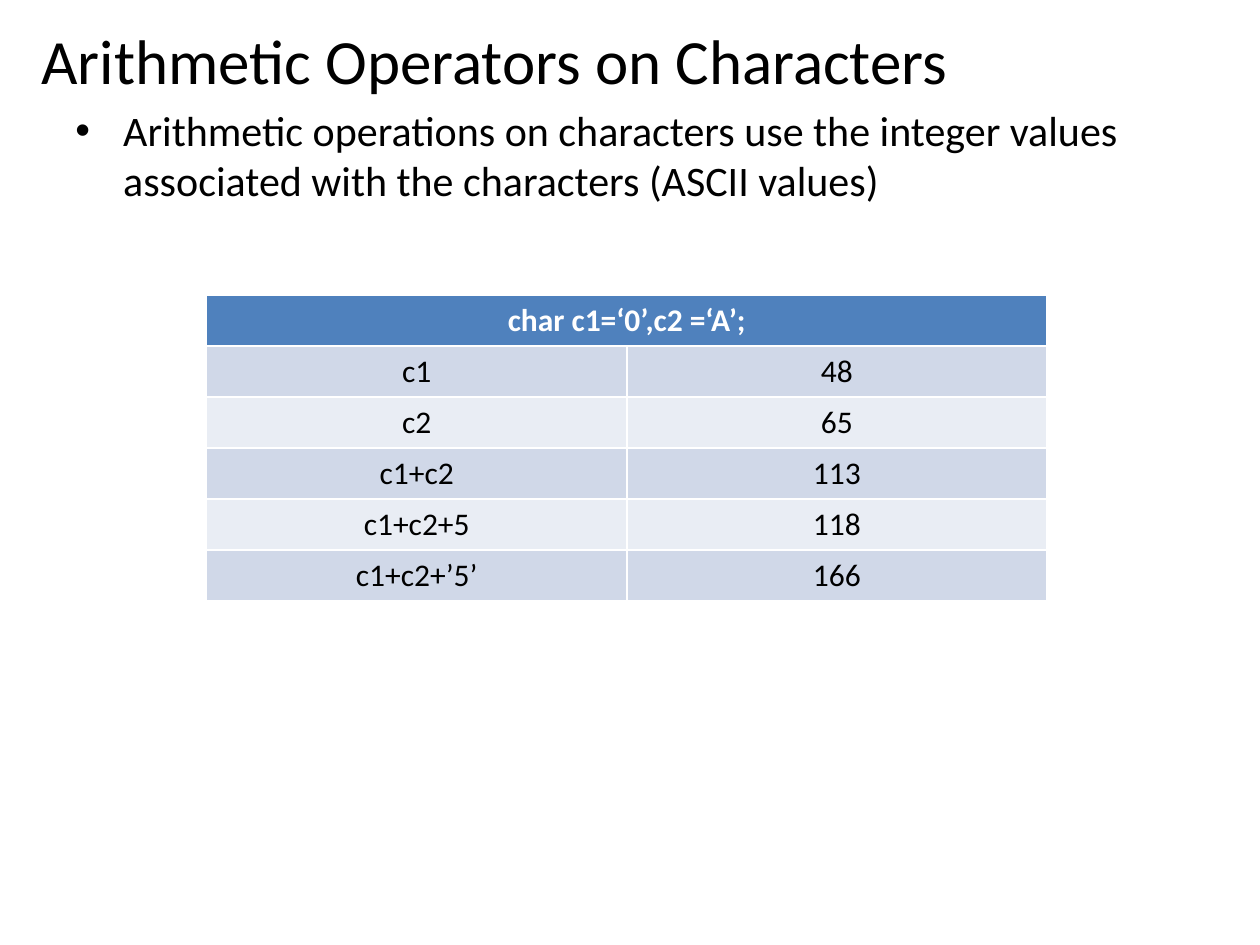
from lxml import etree
from pptx import Presentation, util as u
from pptx.dml.color import RGBColor
from pptx.enum import text
from pptx.oxml.ns import qn

BLACK = RGBColor(0x00, 0x00, 0x00)
WHITE = RGBColor(0xFF, 0xFF, 0xFF)
HEADER_BLUE = RGBColor(0x4F, 0x81, 0xBD)
BAND_DARK = RGBColor(0xD0, 0xD8, 0xE8)
BAND_LIGHT = RGBColor(0xE9, 0xED, 0xF4)

EXPRESSIONS = [
    ("c1", "48"),
    ("c2", "65"),
    ("c1+c2", "113"),
    ("c1+c2+5", "118"),
    ("c1+c2+’5’", "166"),
]


def write(frame, words, size, color=BLACK, bold=False, align=text.PP_ALIGN.LEFT):
    """Fill the frame's first paragraph and return that paragraph."""
    paragraph = frame.paragraphs[0]
    paragraph.alignment = align
    run = paragraph.add_run()
    run.text = words
    run.font.name = "Calibri"
    run.font.size = u.Pt(size)
    run.font.bold = bold
    run.font.color.rgb = color
    return paragraph


def add_frame(left, top, width, height, anchor):
    frame = slide.shapes.add_textbox(*map(u.Inches, (left, top, width, height))).text_frame
    frame.word_wrap = True
    frame.vertical_anchor = anchor
    return frame


deck = Presentation()
deck.slide_width, deck.slide_height = u.Inches(10), u.Inches(7.5)
slide = deck.slides.add_slide(deck.slide_layouts[6])

# Heading and the single bullet point
heading = add_frame(0.23, 0.16, 9, 0.63, text.MSO_ANCHOR.MIDDLE)
write(heading, "Arithmetic Operators on Characters", 36)

body = add_frame(0.5, 0.78, 9, 6.56, text.MSO_ANCHOR.TOP)
point = write(
    body,
    "Arithmetic operations on characters use the integer values "
    "associated with the characters (ASCII values)",
    24,
)
point.space_before = u.Pt(0.2 * 24)
indent = u.Inches(0.38)
properties = point._p.get_or_add_pPr()
properties.set("marL", str(indent))
properties.set("indent", str(-indent))
etree.SubElement(properties, qn("a:buFont")).set("typeface", "Arial")
etree.SubElement(properties, qn("a:buChar")).set("char", "•")

# Table: one merged header row, then banded rows; its style draws the white rules
row_count = len(EXPRESSIONS) + 1
values = slide.shapes.add_table(
    row_count, 2, u.Inches(1.64), u.Inches(2.34), u.Inches(6.67), u.Inches(2.43)
).table

declaration = values.cell(0, 0)
declaration.merge(values.cell(0, 1))
declaration.fill.solid()
declaration.fill.fore_color.rgb = HEADER_BLUE
write(declaration.text_frame, "char c1=‘0’,c2 =‘A’;", 18, WHITE, True, text.PP_ALIGN.CENTER)

for row, pair in enumerate(EXPRESSIONS, start=1):
    for column, entry in enumerate(pair):
        cell = values.cell(row, column)
        cell.fill.solid()
        cell.fill.fore_color.rgb = BAND_DARK if row % 2 else BAND_LIGHT
        write(cell.text_frame, entry, 18, align=text.PP_ALIGN.CENTER)

deck.save("out.pptx")
